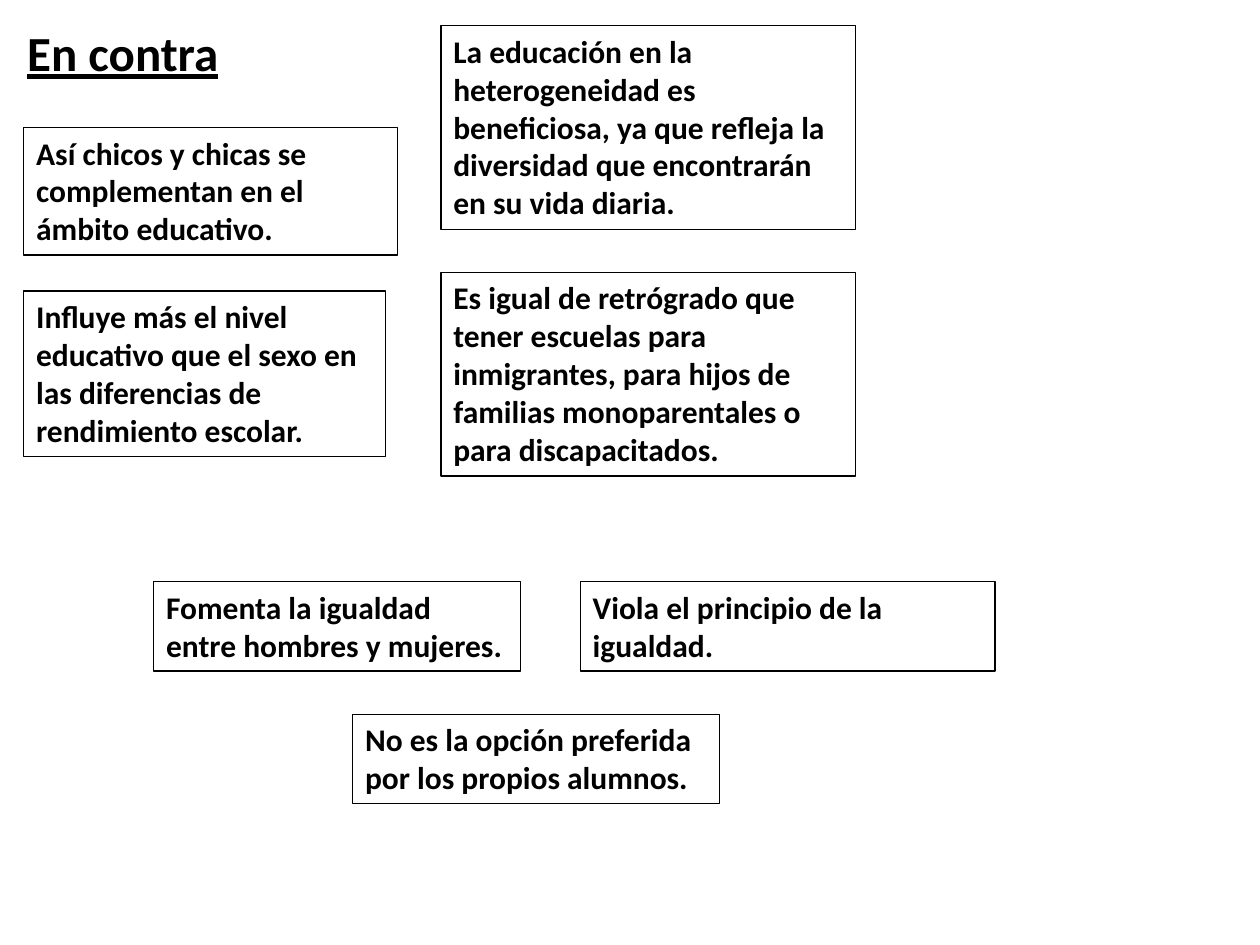
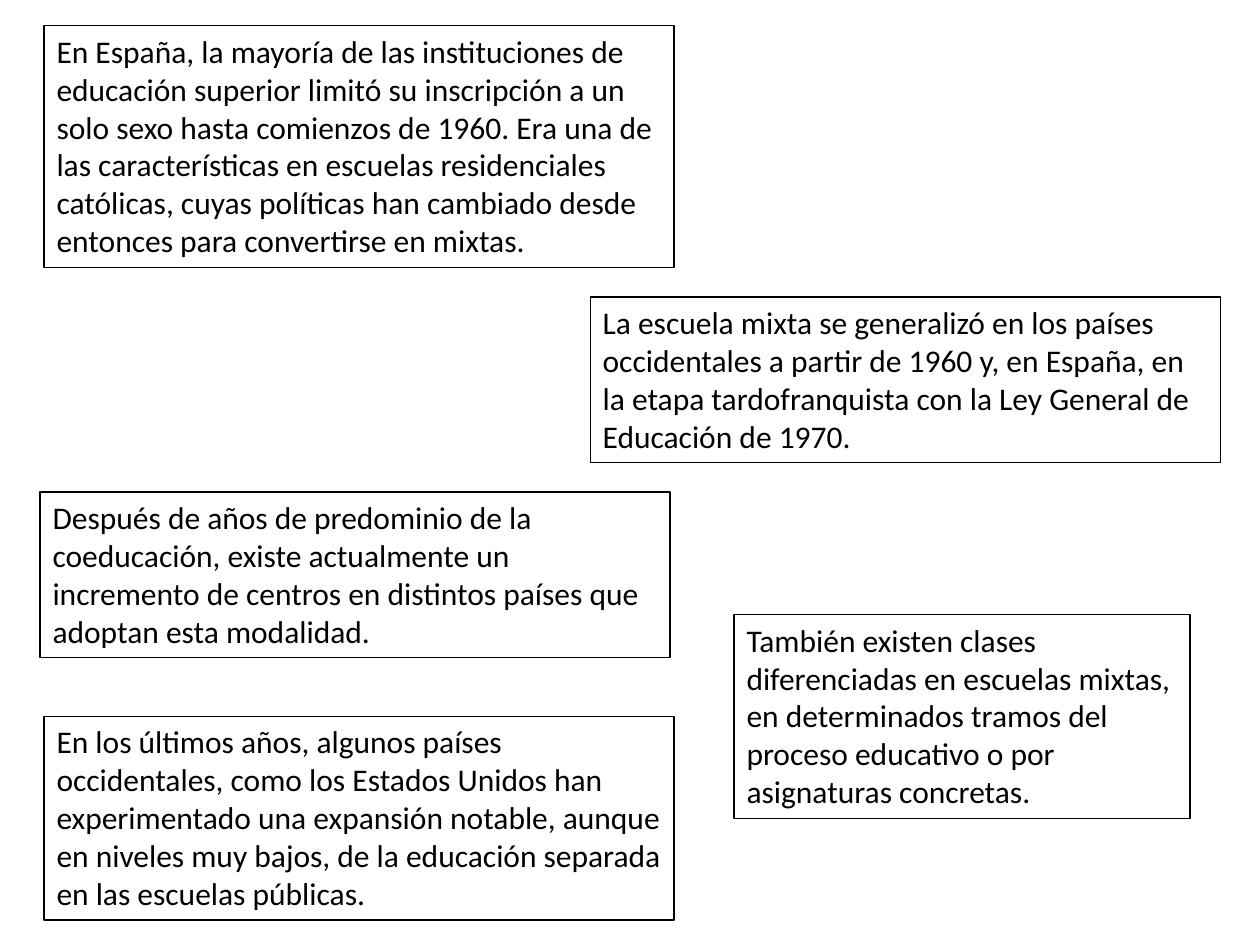
from pptx import Presentation
from pptx.dml.color import RGBColor
from pptx.enum.shapes import MSO_SHAPE
from pptx.enum.text import MSO_ANCHOR, MSO_AUTO_SIZE, PP_ALIGN
from pptx.util import Cm, Pt

BLACK = RGBColor(0x00, 0x00, 0x00)

FRAME = {
    "word_wrap": True,
    "vertical_anchor": MSO_ANCHOR.TOP,
    "auto_size": MSO_AUTO_SIZE.SHAPE_TO_FIT_TEXT,
}
BODY = {"name": "Calibri", "size": Pt(18), "bold": False}
STRONG = {**BODY, "bold": True}
TITLE = {**STRONG, "size": Pt(28), "underline": True}

LINE_HEIGHT = 0.77
PADDING = 0.26
COLUMN = 8.36
WIDE = 12.7

ARGUMENTS = [
    (0.48, 2.57, 7.54, 3, "Así chicos y chicas se complementan en el ámbito educativo."),
    (3.1, 11.73, 7.39, 2, "Fomenta la igualdad entre hombres y mujeres."),
    (7.11, 14.4, 7.39, 2, "No es la opción preferida por los propios alumnos."),
    (11.7, 11.73, COLUMN, 2, "Viola el principio de la igualdad."),
    (8.89, 5.49, COLUMN, 5,
     "Es igual de retrógrado que tener escuelas para inmigrantes, para hijos de "
     "familias monoparentales o para discapacitados."),
    (0.48, 5.87, 7.29, 4,
     "Influye más el nivel educativo que el sexo en las diferencias de "
     "rendimiento escolar."),
    (8.89, 0.52, COLUMN, 5,
     "La educación en la heterogeneidad es beneficiosa, ya que refleja la "
     "diversidad que encontrarán en su vida diaria."),
]

HISTORY = [
    (0.89, 0.52, WIDE, 6,
     "En España, la mayoría de las instituciones de educación superior limitó su "
     "inscripción a un solo sexo hasta comienzos de 1960. Era una de las "
     "características en escuelas residenciales católicas, cuyas políticas han "
     "cambiado desde entonces para convertirse en mixtas."),
    (11.9, 5.99, WIDE, 4,
     "La escuela mixta se generalizó en los países occidentales a partir de 1960 "
     "y, en España, en la etapa tardofranquista con la Ley General de Educación "
     "de 1970."),
    (0.81, 9.92, WIDE, 4,
     "Después de años de predominio de la coeducación, existe actualmente un "
     "incremento de centros en distintos países que adoptan esta modalidad."),
    (0.89, 14.44, WIDE, 5,
     "En los últimos años, algunos países occidentales, como los Estados Unidos "
     "han experimentado una expansión notable, aunque en niveles muy bajos, de la "
     "educación separada en las escuelas públicas."),
    (14.8, 12.39, 9.19, 5,
     "También existen clases diferenciadas en escuelas mixtas, en determinados "
     "tramos del proceso educativo o por asignaturas concretas."),
]


def apply(target, values):
    """Set every attribute named in values on the target."""
    for name, value in values.items():
        setattr(target, name, value)


class Board:
    """Deck of outlined text cards with one shared style."""

    def __init__(self):
        self.deck = Presentation()
        apply(self.deck, {"slide_width": Cm(25.4), "slide_height": Cm(19.05)})
        self.page = None

    def add_page(self):
        """Start a new blank slide."""
        self.page = self.deck.slides.add_slide(self.deck.slide_layouts[6])

    def fill_text(self, box, text, style):
        """Fill a box with one styled paragraph."""
        apply(box.text_frame, FRAME)
        para = box.text_frame.paragraphs[0]
        para.alignment = PP_ALIGN.LEFT
        span = para.add_run()
        span.text = text
        apply(span.font, style)
        span.font.color.rgb = BLACK

    def title(self, text):
        """Add the underlined slide title."""
        box = self.page.shapes.add_textbox(Cm(0.3), Cm(0.33), Cm(8.2), Cm(1.45))
        self.fill_text(box, text, TITLE)

    def card(self, left, top, width, lines, text, style):
        """Add an outlined card as tall as its number of lines."""
        height = PADDING + LINE_HEIGHT * lines
        box = self.page.shapes.add_shape(
            MSO_SHAPE.RECTANGLE, Cm(left), Cm(top), Cm(width), Cm(height))
        box.shadow.inherit = False
        box.fill.background()
        box.line.color.rgb = BLACK
        box.line.width = Pt(0.75)
        self.fill_text(box, text, style)

    def cards(self, entries, style):
        """Add a group of cards in one text style."""
        for entry in entries:
            self.card(*entry, style)


def main():
    """Build both slides and save the deck."""
    board = Board()
    board.add_page()
    board.title("En contra")
    board.cards(ARGUMENTS, STRONG)
    board.add_page()
    board.cards(HISTORY, BODY)
    board.deck.save("out.pptx")


if __name__ == "__main__":
    main()
